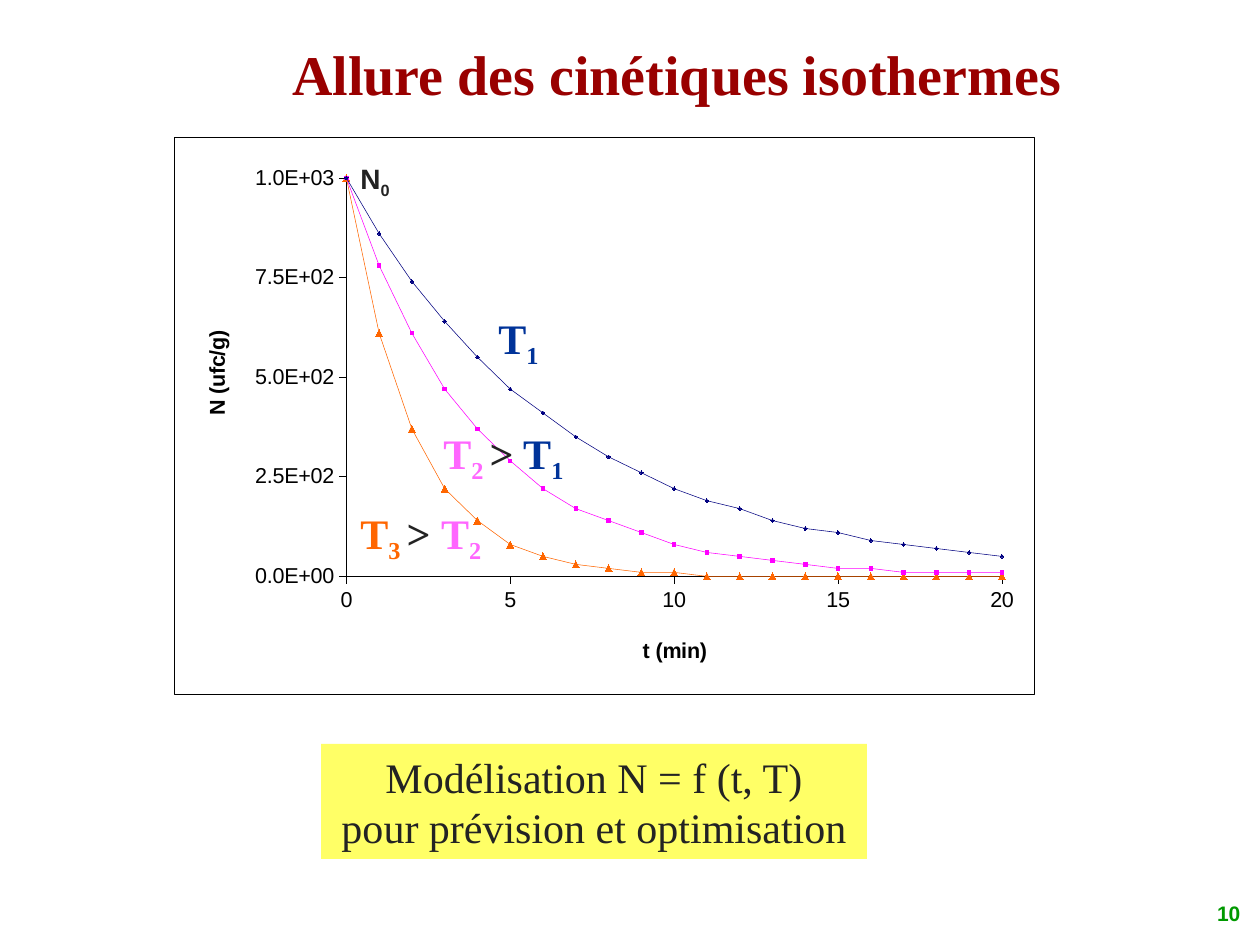
"""Build the slide on isothermal kinetics: decay chart, curve labels and conclusion."""
import math

import lxml.etree
import pptx
import pptx.chart.data
import pptx.dml.color
import pptx.enum.chart
import pptx.enum.shapes
import pptx.enum.text
import pptx.oxml
import pptx.oxml.ns
import pptx.util

RGBColor = pptx.dml.color.RGBColor
BLACK = RGBColor(0, 0, 0)
WHITE = RGBColor(255, 255, 255)
INK = RGBColor(0x23, 0x23, 0x23)
DARK_RED = RGBColor(0x99, 0, 0)
GREEN = RGBColor(0, 0x99, 0)
YELLOW = RGBColor(0xFF, 0xFF, 0x66)
BLUE = RGBColor(0, 0x33, 0x99)
PINK = RGBColor(0xFF, 0x66, 0xFF)
ORANGE = RGBColor(0xFF, 0x66, 0)
NAVY = RGBColor(0, 0, 0x80)
MAGENTA = RGBColor(0xFF, 0, 0xFF)
SERIF = "Times New Roman"
SANS = "Arial"
PX = 914400 / 126
HAIRLINE = pptx.util.Pt(0.32)
NAMESPACES = pptx.oxml.ns.nsdecls("c", "a")


def write(shape, lines, size, face, bold):
    """Fill a shape with lines of (text, colour, is_subscript) spans."""
    frame = shape.text_frame
    frame.word_wrap = False
    for number, line in enumerate(lines):
        para = frame.add_paragraph() if number else frame.paragraphs[0]
        para.alignment = pptx.enum.text.PP_ALIGN.LEFT
        para.font.size = pptx.util.Pt(size)
        para.font.name = face
        para.font.bold = bold
        for text, colour, subscript in line:
            span = para.add_run()
            span.text = text
            span.font.color.rgb = colour
            if subscript:
                span.font._element.set("baseline", "-25000")


def arrange(element, index, **fractions):
    """Give a chart part a manual layout in fractions of the chart."""
    for old in element.findall(pptx.oxml.ns.qn("c:layout")):
        element.remove(old)
    target = '<c:layoutTarget val="inner"/>' if "w" in fractions else ""
    modes = '<c:xMode val="edge"/><c:yMode val="edge"/>'
    values = "".join(f'<c:{key} val="{value}"/>' for key, value in fractions.items())
    element.insert(index, pptx.oxml.parse_xml(
        f"<c:layout {NAMESPACES}><c:manualLayout>{target}{modes}{values}"
        "</c:manualLayout></c:layout>"))


deck = pptx.Presentation()
deck.slide_width = round(1260 * PX)
deck.slide_height = round(945 * PX)
page = deck.slides.add_slide(deck.slide_layouts[6])

data = pptx.chart.data.XyChartData()
for number, rate in enumerate((0.15, 0.25, 0.5), 1):
    curve = data.add_series(f"Series {number}")
    for minute in range(41):
        curve.add_data_point(minute, round(1000 * math.exp(-rate * minute), -1))
chart = page.shapes.add_chart(
    pptx.enum.chart.XL_CHART_TYPE.XY_SCATTER_LINES,
    *(round(length * PX) for length in (174, 137, 861, 558)), data).chart
chart.has_legend = False
chart.has_title = False
chart.font.size = pptx.util.Pt(12.3)
chart.font.name = SANS
chart.font.color.rgb = BLACK
chart._chartSpace.find(pptx.oxml.ns.qn("c:chart")).addnext(pptx.oxml.parse_xml(
    f'<c:spPr {NAMESPACES}><a:solidFill><a:srgbClr val="{WHITE}"/></a:solidFill>'
    f'<a:ln w="{HAIRLINE}"><a:solidFill><a:srgbClr val="{BLACK}"/></a:solidFill></a:ln></c:spPr>'))
arrange(chart._chartSpace.chart.plotArea, 0, x=0.2, y=0.073, w=0.762, h=0.715)

AXES = (
    (chart.category_axis, "t (min)", 20, 5, "0", 0.54, 0.89),
    (chart.value_axis, "N (ufc/g)", 1000, 250, "0.0E+00", 0.03, 0.34),
)
for axis, title, maximum, step, number_format, left, top in AXES:
    axis.minimum_scale = 0
    axis.maximum_scale = maximum
    axis.major_unit = step
    axis.has_major_gridlines = False
    axis.major_tick_mark = pptx.enum.chart.XL_TICK_MARK.OUTSIDE
    axis.minor_tick_mark = pptx.enum.chart.XL_TICK_MARK.NONE
    axis.tick_labels.number_format = number_format
    axis.tick_labels.number_format_is_linked = False
    axis.format.line.color.rgb = BLACK
    axis.format.line.width = HAIRLINE
    para = axis.axis_title.text_frame.paragraphs[0]
    para.text = title
    para.font.size = pptx.util.Pt(12.3)
    para.font.name = SANS
    para.font.bold = True
    para.font.color.rgb = BLACK
    arrange(axis.axis_title._element, 1, x=left, y=top)

MARKER = pptx.enum.chart.XL_MARKER_STYLE
STYLES = ((NAVY, MARKER.DIAMOND, 2), (MAGENTA, MARKER.SQUARE, 2), (ORANGE, MARKER.TRIANGLE, 4))
chart.plots[0].vary_by_categories = False
for curve, (colour, symbol, size) in zip(chart.plots[0].series, STYLES):
    curve.smooth = False
    curve.format.line.color.rgb = colour
    curve.format.line.width = HAIRLINE
    curve.marker.style = symbol
    curve.marker.size = size
    curve.marker.format.fill.solid()
    curve.marker.format.fill.fore_color.rgb = colour
    curve.marker.format.line.color.rgb = colour

LABELS = (
    (280, 33, 795, 79, 32, SERIF, [("Allure des cinétiques isothermes", DARK_RED, False)]),
    (486, 306, 67, 63, 24, SERIF, [("T", BLUE, False), ("1", BLUE, True)]),
    (431, 421, 151, 63, 24, SERIF, [("T", PINK, False), ("2 ", PINK, True), (">", INK, False),
                                    (" T", BLUE, False), ("1", BLUE, True)]),
    (348, 501, 151, 63, 24, SERIF, [("T", ORANGE, False), ("3 ", ORANGE, True), ("> ", INK, False),
                                    ("T", PINK, False), ("2", PINK, True)]),
    (348, 155, 57, 47, 16, SANS, [("N", INK, False), ("0", INK, True)]),
)
for left, top, width, height, size, face, spans in LABELS:
    box = page.shapes.add_textbox(*(round(length * PX) for length in (left, top, width, height)))
    write(box, [spans], size, face, True)

SHAPE = pptx.enum.shapes.MSO_SHAPE
conclusion = page.shapes.add_shape(
    SHAPE.RECTANGLE, *(round(length * PX) for length in (321, 744, 546, 115)))
page_number = page.shapes.add_shape(
    SHAPE.OVAL, *(round(length * PX) for length in (1197, 892, 53, 42)))
for shape, colour in ((conclusion, YELLOW), (page_number, WHITE)):
    shape.shadow.inherit = False
    shape.fill.solid()
    shape.fill.fore_color.rgb = colour
    shape.line.fill.background()
    shape.text_frame.vertical_anchor = pptx.enum.text.MSO_ANCHOR.MIDDLE
write(conclusion, [[("Modélisation N = f (t, T)", INK, False)],
                   [("pour prévision et optimisation", INK, False)]], 24, SERIF, False)
for para in conclusion.text_frame.paragraphs:
    para.alignment = pptx.enum.text.PP_ALIGN.CENTER
write(page_number, [[("10", GREEN, False)]], 12, SANS, True)

deck.save("out.pptx")
